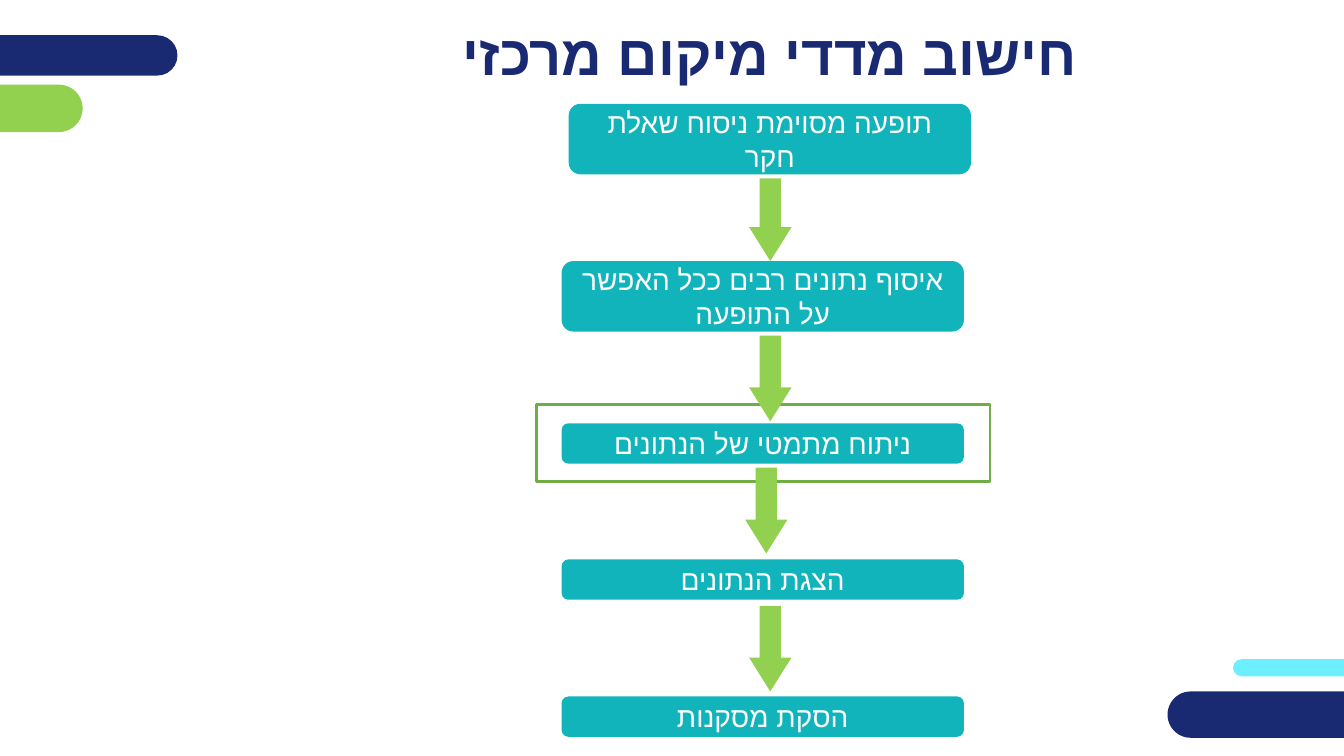
from pptx import Presentation
from pptx.dml.color import RGBColor
from pptx.enum.shapes import MSO_SHAPE as Shape
from pptx.enum.text import MSO_ANCHOR as Anchor, MSO_AUTO_SIZE as AutoSize, PP_ALIGN as Align
from pptx.util import Inches, Pt
from lxml import etree

NAVY = RGBColor(0x19, 0x2A, 0x72)
LIME = RGBColor(0x92, 0xD0, 0x50)
CYAN = RGBColor(0x6C, 0xF0, 0xFF)
TEAL = RGBColor(0x12, 0xB4, 0xBC)
GREEN = RGBColor(0x70, 0xAD, 0x47)
WHITE = RGBColor(0xFF, 0xFF, 0xFF)

BOX_WIDTH = 3.99
ARROW_WIDTH = 0.42

# left, top, width, height, colour
BARS = [
    (12.23, 6.54, 1.74, 0.17, CYAN),
    (-0.45, 0.84, 1.27, 0.47, LIME),
    (-0.53, 0.35, 2.29, 0.4, NAVY),
    (11.58, 6.86, 2.4, 0.46, NAVY),
]
# left, top, height, text
STEPS = [
    (5.64, 1.03, 0.7, "תופעה מסוימת ניסוח שאלת חקר"),
    (5.57, 2.59, 0.7, "איסוף נתונים רבים ככל האפשר על התופעה"),
    (5.57, 4.2, 0.4, "ניתוח מתמטי של הנתונים"),
    (5.57, 5.55, 0.4, "הצגת הנתונים"),
    (5.57, 6.91, 0.4, "הסקת מסקנות"),
]
# left, top, height
ARROWS = [(7.43, 1.77, 0.82), (7.43, 3.33, 0.85), (7.39, 4.64, 0.85), (7.43, 6.01, 0.85)]


class FlowSlide:
    font = "Arial"

    def __init__(self, prs):
        self.s = prs.slides.add_slide(prs.slide_layouts[5])

    def label(self, sp, text, size, color, bold=False):
        """Fill a shape with one centred right-to-left paragraph."""
        tf = sp.text_frame
        tf.text = text
        tf.word_wrap = True
        tf.auto_size = AutoSize.NONE
        tf.vertical_anchor = Anchor.MIDDLE
        p = tf.paragraphs[0]
        p.alignment = Align.CENTER
        p._p.get_or_add_pPr().set("rtl", "1")
        r = p.runs[0]
        r.font.name = self.font
        r.font.size = Pt(size)
        r.font.bold = bold
        r.font.color.rgb = color
        rPr = r._r.get_or_add_rPr()
        rPr.set("lang", "he-IL")
        latin_tag = rPr.find("{*}latin").tag
        etree.SubElement(rPr, latin_tag.replace("latin", "cs")).set("typeface", self.font)

    def title(self, text, left, top, width, height):
        sp = self.s.shapes.title
        sp.left, sp.top = Inches(left), Inches(top)
        sp.width, sp.height = Inches(width), Inches(height)
        self.label(sp, text, 40, NAVY, bold=True)

    def shape(self, kind, left, top, width, height, fill, line=None):
        sp = self.s.shapes.add_shape(kind, Inches(left), Inches(top), Inches(width), Inches(height))
        sp.shadow.inherit = False
        sp.fill.solid()
        sp.fill.fore_color.rgb = fill
        if line is None:
            sp.line.fill.background()
        else:
            sp.line.color.rgb = line
            sp.line.width = Pt(2)
        return sp

    def bar(self, left, top, width, height, color):
        sp = self.shape(Shape.ROUNDED_RECTANGLE, left, top, width, height, color)
        sp.adjustments[0] = 0.5

    def step(self, left, top, height, text):
        sp = self.shape(Shape.FLOWCHART_ALTERNATE_PROCESS, left, top, BOX_WIDTH, height, TEAL)
        self.label(sp, text, 20, WHITE)

    def arrow(self, left, top, height):
        sp = self.shape(Shape.DOWN_ARROW, left, top, ARROW_WIDTH, height, LIME)
        sp.adjustments[0], sp.adjustments[1] = 0.5, 0.8


def main():
    prs = Presentation()
    prs.slide_width, prs.slide_height = Inches(13.33), Inches(7.5)
    flow = FlowSlide(prs)
    for bar in BARS:
        flow.bar(*bar)
    flow.shape(Shape.RECTANGLE, 5.32, 4.01, 4.5, 0.77, WHITE, GREEN)
    flow.title("חישוב מדדי מיקום מרכזי", 2.03, 0.18, 11.21, 0.7)
    for step in STEPS:
        flow.step(*step)
    for arrow in ARROWS:
        flow.arrow(*arrow)
    prs.save("out.pptx")


if __name__ == "__main__":
    main()
